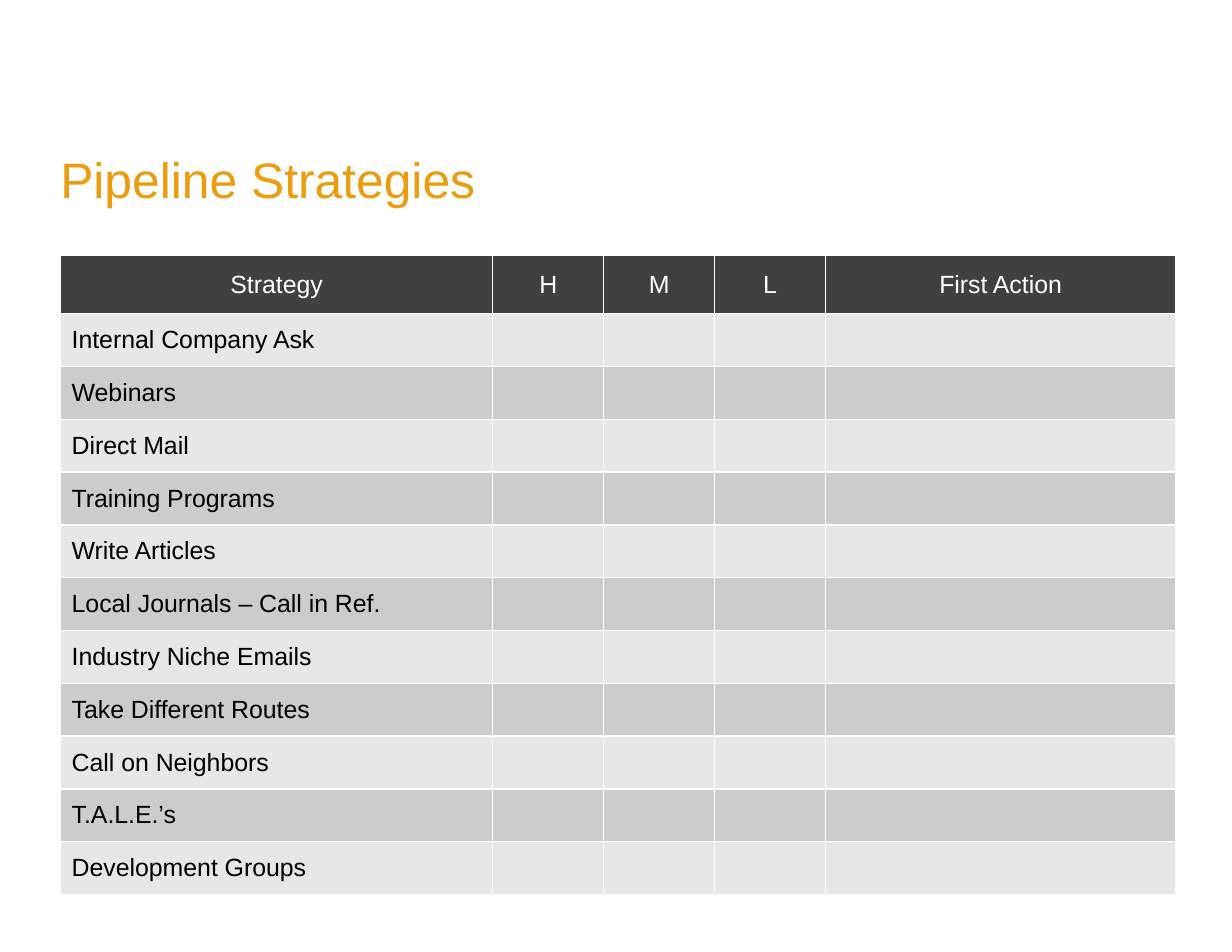
from pptx import Presentation, util as u
from pptx.dml.color import RGBColor
from pptx.enum import text
from pptx.oxml.ns import qn
from lxml import etree

HUES = {"title": "EB9C0F", "head": "404040", "light": "E7E7E7",
        "dark": "CCCCCC", "white": "FFFFFF", "black": "000000"}
WIDE, HIGH = u.Inches(11), u.Inches(8.5)
COLS = [3.86, 0.99, 0.99, 0.99, 3.13]
HEADS = ["Strategy", "H", "M", "L", "First Action"]
PLANS = ["Internal Company Ask", "Webinars", "Direct Mail",
         "Training Programs", "Write Articles",
         "Local Journals – Call in Ref.", "Industry Niche Emails",
         "Take Different Routes", "Call on Neighbors", "T.A.L.E.’s",
         "Development Groups"]


def add_run(para, words, size, hue):
    run = para.add_run()
    run.text = words
    run.font.name = "Arial"
    run.font.size = u.Pt(size)
    run.font.color.rgb = RGBColor.from_string(HUES[hue])


def add_title(slide, words):
    box = slide.shapes.add_textbox(
        int(WIDE * 0.04), int(HIGH * 0.15), u.Inches(4.04), u.Inches(0.64))
    frame = box.text_frame
    frame.word_wrap = False
    frame.auto_size = text.MSO_AUTO_SIZE.SHAPE_TO_FIT_TEXT
    add_run(frame.paragraphs[0], words, 32, "title")


def add_edges(cell):
    props = cell._tc.get_or_add_tcPr()
    for side in ("lnL", "lnR", "lnT", "lnB"):
        line = etree.SubElement(props, qn("a:" + side), w=str(u.Pt(1)))
        fill = etree.SubElement(line, qn("a:solidFill"))
        etree.SubElement(fill, qn("a:srgbClr"), val=HUES["white"])


def fill_cell(cell, words, fill, ink, align):
    add_edges(cell)
    cell.fill.solid()
    cell.fill.fore_color.rgb = RGBColor.from_string(HUES[fill])
    cell.vertical_anchor = text.MSO_ANCHOR.MIDDLE
    if words:
        para = cell.text_frame.paragraphs[0]
        para.alignment = align
        add_run(para, words, 16, ink)


def add_grid(slide):
    rows = [HEADS] + [[plan] + [""] * (len(COLS) - 1) for plan in PLANS]
    frame = slide.shapes.add_table(
        len(rows), len(COLS), u.Inches(0.54), u.Inches(2.28),
        u.Inches(sum(COLS)), u.Inches(5.71))
    grid = frame.table
    for col, width in zip(grid.columns, COLS):
        col.width = u.Inches(width)
    head = u.Inches(0.52)
    step = (u.Inches(5.71) - head) // len(PLANS)
    for i, words in enumerate(rows):
        grid.rows[i].height = step if i else head
        fill = ("light" if i % 2 else "dark") if i else "head"
        ink = "black" if i else "white"
        align = text.PP_ALIGN.LEFT if i else text.PP_ALIGN.CENTER
        for j, word in enumerate(words):
            fill_cell(grid.cell(i, j), word, fill, ink, align)


def main():
    deck = Presentation()
    deck.slide_width, deck.slide_height = WIDE, HIGH
    slide = deck.slides.add_slide(deck.slide_layouts[6])
    add_title(slide, "Pipeline Strategies")
    add_grid(slide)
    deck.save("out.pptx")


if __name__ == "__main__":
    main()
